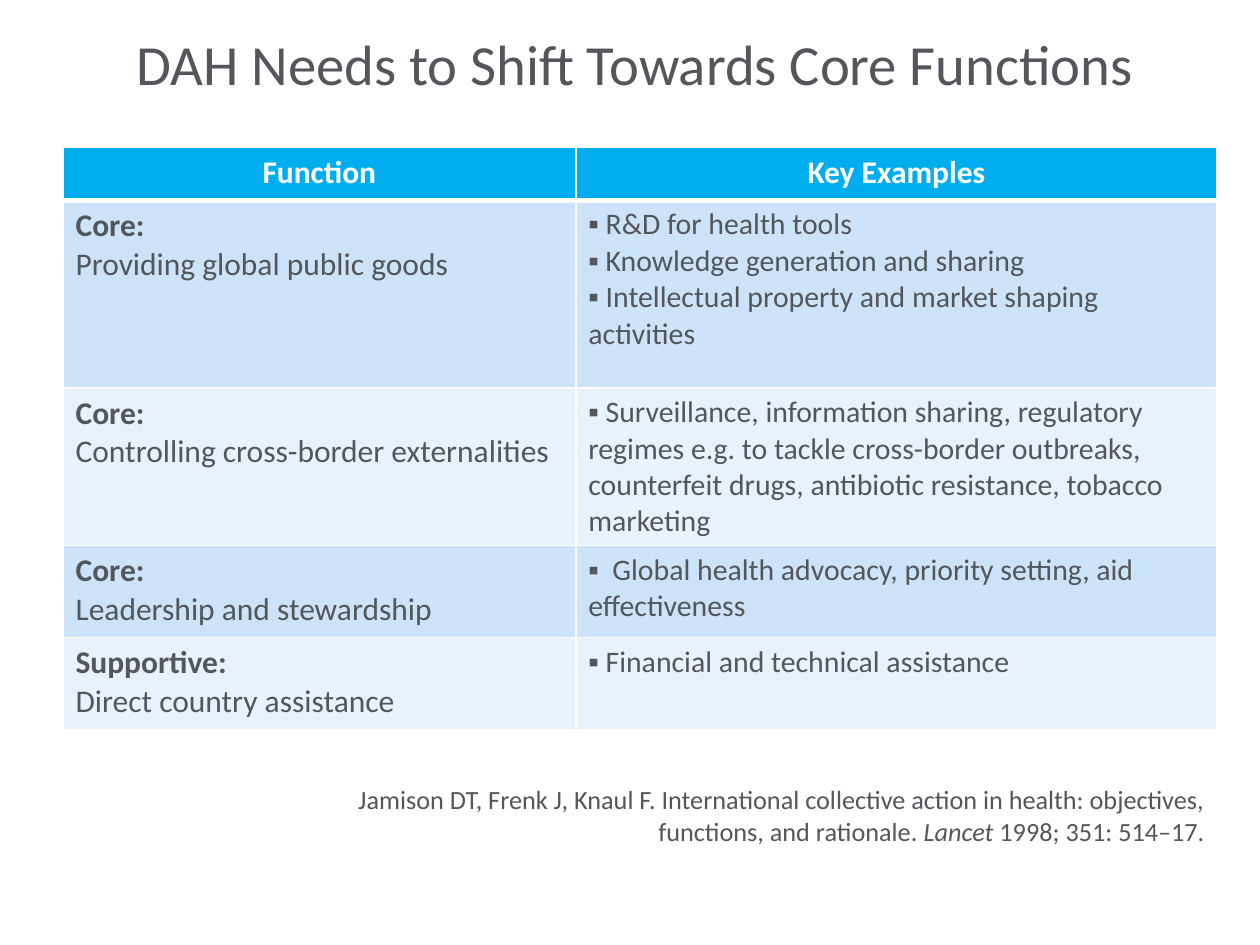
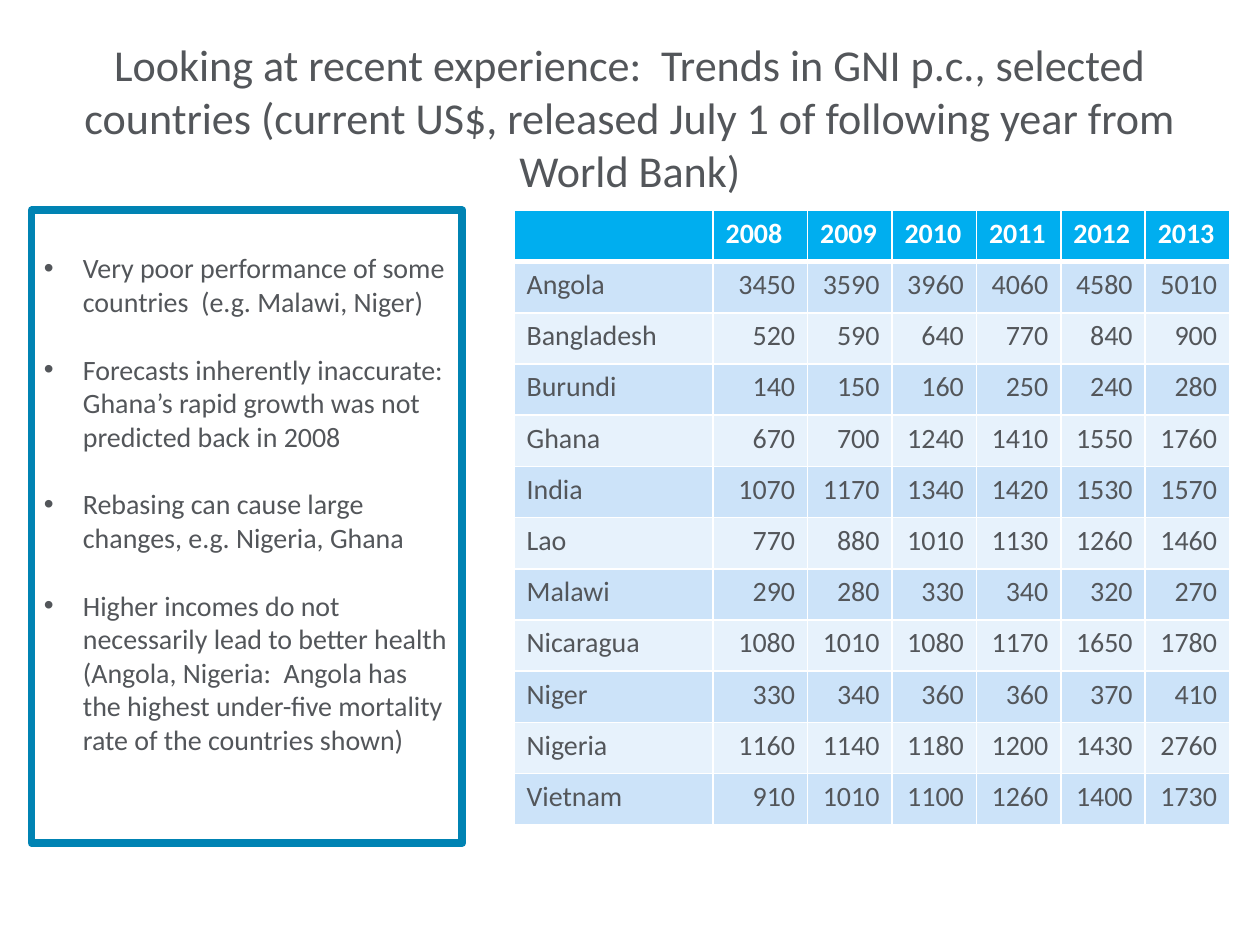
from lxml import etree
from pptx import Presentation
from pptx.dml.color import RGBColor
from pptx.enum import shapes, text
from pptx.oxml import ns
from pptx.util import Inches, Pt

FONT = "Calibri"
INK = RGBColor(0x53, 0x56, 0x5A)
WHITE = RGBColor(0xFF, 0xFF, 0xFF)
HEADER = RGBColor(0x00, 0xAE, 0xEF)
BANDS = [RGBColor(0xCC, 0xE3, 0xF9), RGBColor(0xE7, 0xF2, 0xFC)]
OUTLINE = RGBColor(0x00, 0x83, 0xB3)
LEFT, CENTER, RIGHT = text.PP_ALIGN.LEFT, text.PP_ALIGN.CENTER, text.PP_ALIGN.RIGHT
TOP, MIDDLE = text.MSO_ANCHOR.TOP, text.MSO_ANCHOR.MIDDLE

FUNCTIONS_TITLE = "DAH Needs to Shift Towards Core Functions"
FUNCTION_HEADERS = ["Function", "Key Examples"]
FUNCTIONS = [
    ("Core:", "Providing global public goods",
     ["▪ R&D for health tools",
      "▪ Knowledge generation and sharing",
      "▪ Intellectual property and market shaping activities"]),
    ("Core:", "Controlling cross-border externalities",
     ["▪ Surveillance, information sharing, regulatory regimes e.g. to tackle "
      "cross-border outbreaks, counterfeit drugs, antibiotic resistance, tobacco marketing"]),
    ("Core:", "Leadership and stewardship",
     ["▪  Global health advocacy, priority setting, aid effectiveness"]),
    ("Supportive:", "Direct country assistance",
     ["▪ Financial and technical assistance"]),
]
CITATION = [
    ("Jamison DT, Frenk J, Knaul F. International collective action in health: "
     "objectives, functions, and rationale. ", {}),
    ("Lancet ", {"italic": True}),
    ("1998; 351: 514–17.", {}),
]

INCOME_TITLE = ("Looking at recent experience:  Trends in GNI p.c., selected countries "
                "(current US$, released July 1 of following year from World Bank)")
YEARS = ["2008", "2009", "2010", "2011", "2012", "2013"]
INCOMES = [
    ("Angola", 3450, 3590, 3960, 4060, 4580, 5010),
    ("Bangladesh", 520, 590, 640, 770, 840, 900),
    ("Burundi", 140, 150, 160, 250, 240, 280),
    ("Ghana", 670, 700, 1240, 1410, 1550, 1760),
    ("India", 1070, 1170, 1340, 1420, 1530, 1570),
    ("Lao", 770, 880, 1010, 1130, 1260, 1460),
    ("Malawi", 290, 280, 330, 340, 320, 270),
    ("Nicaragua", 1080, 1010, 1080, 1170, 1650, 1780),
    ("Niger", 330, 340, 360, 360, 370, 410),
    ("Nigeria", 1160, 1140, 1180, 1200, 1430, 2760),
    ("Vietnam", 910, 1010, 1100, 1260, 1400, 1730),
]
LESSONS = [
    "Very poor performance of some countries  (e.g. Malawi, Niger)",
    "Forecasts inherently inaccurate:  Ghana’s rapid growth was not predicted back in 2008",
    "Rebasing can cause large changes, e.g. Nigeria, Ghana",
    "Higher incomes do not necessarily lead to better health (Angola, Nigeria:  "
    "Angola has the highest under-five mortality rate of the countries shown)",
]


def set_all(target, values):
    for name, value in values.items():
        setattr(target, name, value)


def add_bullet(para):
    properties = para._p.get_or_add_pPr()
    properties.set("marL", str(Inches(0.31)))
    properties.set("indent", str(-Inches(0.31)))
    etree.SubElement(properties, ns.qn("a:buFont"), typeface="Arial")
    etree.SubElement(properties, ns.qn("a:buChar"), char="•")


def write(frame, paragraphs, size, color=INK, align=LEFT, bullets=False, gap=0):
    for index, spans in enumerate(paragraphs):
        para = frame.add_paragraph() if index else frame.paragraphs[0]
        if bullets:
            add_bullet(para)
        para.alignment = align
        if index and gap:
            para.space_before = Pt(gap)
        for words, style in spans:
            span = para.add_run()
            span.text = words
            set_all(span.font, {"name": FONT, "size": Pt(size), "bold": False, **style})
            span.font.color.rgb = color


def add_text(page, place, paragraphs, size, align, **frame_format):
    box = page.shapes.add_textbox(*map(Inches, place))
    set_all(box.text_frame, {"word_wrap": True, **frame_format})
    write(box.text_frame, paragraphs, size, align=align)


def add_borders(cell, widths):
    properties = cell._tc.get_or_add_tcPr()
    for side, width in widths.items():
        line = etree.SubElement(properties, ns.qn("a:ln" + side), w=str(Pt(width)))
        fill = etree.SubElement(line, ns.qn("a:solidFill"))
        etree.SubElement(fill, ns.qn("a:srgbClr"), val=str(WHITE))


def add_grid(page, left, top, widths, heights, rows):
    frame = page.shapes.add_table(len(rows), len(widths), Inches(left), Inches(top),
                                  Inches(sum(widths)), Inches(sum(heights)))
    table = frame.table
    for column, width in zip(table.columns, widths):
        column.width = Inches(width)
    for row_index, (row, height, cells) in enumerate(zip(table.rows, heights, rows)):
        row.height = Inches(height)
        for cell, (paragraphs, size, align) in zip(row.cells, cells):
            add_borders(cell, {"L": 1, "R": 1, "T": 3 if row_index == 1 else 1,
                               "B": 1 if row_index else 3})
            cell.fill.solid()
            cell.fill.fore_color.rgb = BANDS[(row_index - 1) % 2] if row_index else HEADER
            write(cell.text_frame, paragraphs, size, INK if row_index else WHITE, align)


def plain(words, **style):
    return [(words, style)]


def build_functions(page):
    add_text(page, (0.5, 0.23, 9.08, 0.95), [plain(FUNCTIONS_TITLE)], 32.4, CENTER,
             vertical_anchor=TOP, margin_top=0)
    rows = [[([plain(name, bold=True)], 18, CENTER) for name in FUNCTION_HEADERS]]
    for kind, purpose, examples in FUNCTIONS:
        rows.append([([plain(kind, bold=True), plain(purpose)], 18, LEFT),
                     ([plain(example) for example in examples], 17, LEFT)])
    add_grid(page, 0.5, 1.17, [4.07, 5.09], [0.42, 1.49, 1.25, 0.73, 0.73], rows)
    add_text(page, (2.33, 6.17, 7.33, 0.86), [CITATION], 15, RIGHT)


def build_incomes(page):
    add_text(page, (0.5, 0.3, 9, 1.25), [plain(INCOME_TITLE)], 25.2, CENTER,
             vertical_anchor=MIDDLE)
    rows = [[([], 16, LEFT)] + [([plain(year, bold=True)], 16, LEFT) for year in YEARS]]
    for country, *values in INCOMES:
        rows.append([([plain(country)], 16, LEFT)]
                    + [([plain(str(value))], 16, RIGHT) for value in values])
    add_grid(page, 4.08, 1.67, [1.58, 0.75] + [0.67] * 5, [4.88 / len(rows)] * len(rows), rows)

    panel = page.shapes.add_shape(shapes.MSO_SHAPE.RECTANGLE,
                                  *map(Inches, (0.25, 1.67, 3.42, 5.02)))
    panel.shadow.inherit = False
    panel.fill.background()
    panel.line.color.rgb = OUTLINE
    panel.line.width = Pt(4.5)
    set_all(panel.text_frame, {"word_wrap": True, "vertical_anchor": TOP,
                               "margin_top": Inches(0.32)})
    write(panel.text_frame, [plain(lesson) for lesson in LESSONS], 16, bullets=True, gap=19.5)


def main():
    deck = Presentation()
    deck.slide_width, deck.slide_height = Inches(10), Inches(7.5)
    for build in (build_functions, build_incomes):
        build(deck.slides.add_slide(deck.slide_layouts[6]))
    deck.save("out.pptx")


if __name__ == "__main__":
    main()
